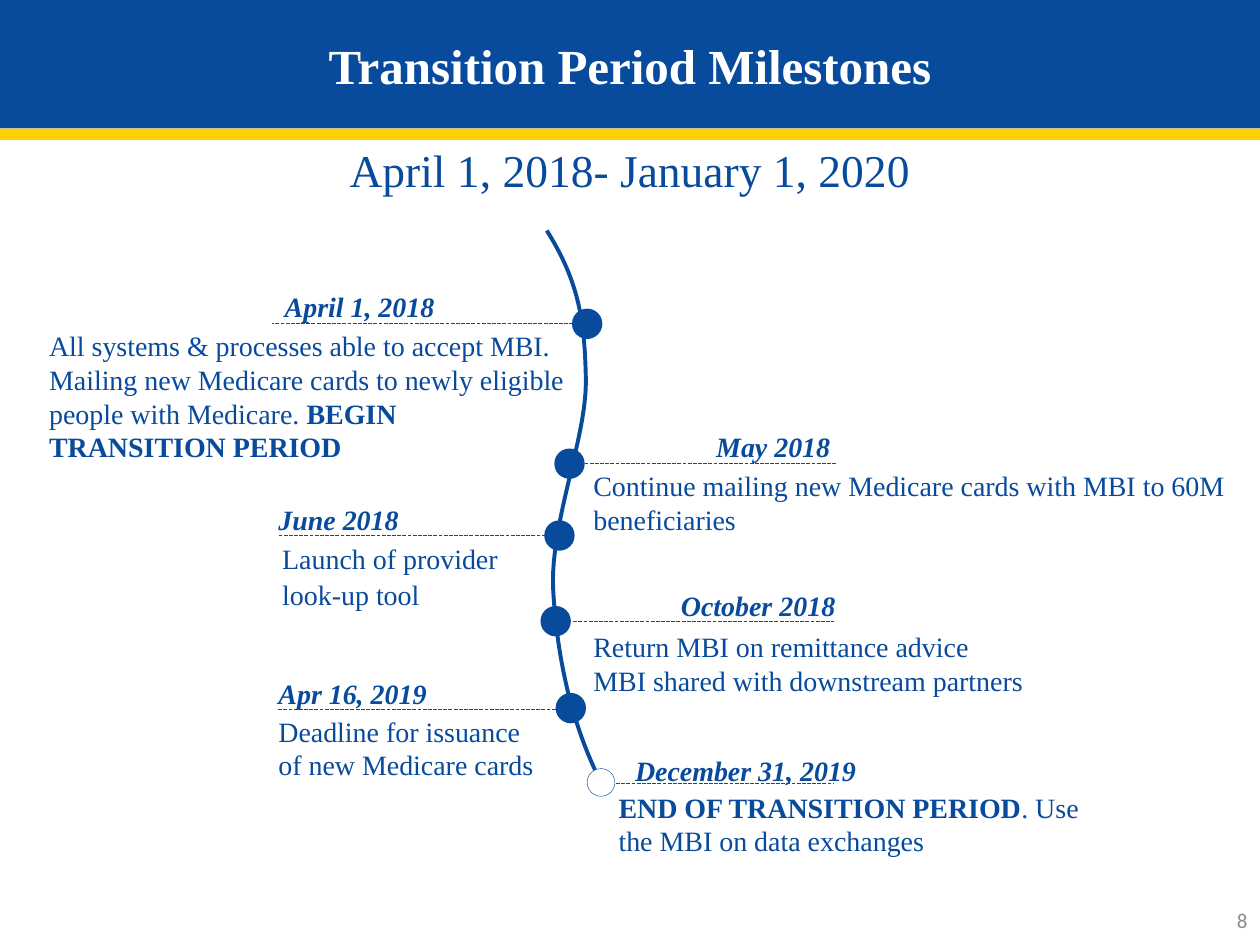
from dataclasses import dataclass

from lxml import etree
from pptx import Presentation
from pptx.dml.color import RGBColor
from pptx.enum import dml, shapes, text
from pptx.oxml import ns
from pptx.util import Inches, Pt


@dataclass(frozen=True)
class Theme:
    """Colours, fonts and type sizes of the slide."""
    blue: RGBColor = RGBColor.from_string("084A9C")
    gold: RGBColor = RGBColor.from_string("FFD004")
    white: RGBColor = RGBColor.from_string("FFFFFF")
    grey: RGBColor = RGBColor.from_string("8C8C8C")
    serif: str = "Times New Roman"
    sans: str = "Calibri"
    title: int = 28
    period: int = 26
    body: int = 16
    number: int = 12


@dataclass(frozen=True)
class Milestone:
    """One dated stop: marker corner, rule, date box, detail box and wording."""
    marker: tuple
    rule: tuple
    date_box: tuple
    date: str
    detail_box: tuple
    detail: tuple
    date_align: text.PP_ALIGN = text.PP_ALIGN.LEFT
    gap: float = 0
    final: bool = False


THEME = Theme()
MARKER_SIZE = 0.22
RIGHT = text.PP_ALIGN.RIGHT
CURVE_START = (4.34, 1.83)
CURVE = (
    ((4.59, 2.23), (4.64, 2.53), (4.65, 3)),
    ((4.66, 3.47), (4.37, 4.13), (4.39, 4.67)),
    ((4.42, 5.21), (4.53, 5.74), (4.78, 6.23)),
)
MILESTONES = (
    Milestone((4.55, 2.46), (4.55, 2.16, 2.57), (2.26, 2.3, 2.33, 0.31), "April 1, 2018",
              (0.39, 2.57, 4.13, 1.12),
              ((("All systems & processes able to accept MBI. Mailing new Medicare cards "
                 "to newly eligible people with Medicare. ", False),
                ("BEGIN TRANSITION PERIOD", True)),)),
    Milestone((4.41, 3.57), (4.64, 6.64, 3.68), (5.46, 3.41, 1.13, 0.31), "May 2018",
              (4.71, 3.68, 5.04, 0.58),
              ((("Continue mailing new Medicare cards with MBI to 60M beneficiaries", False),),),
              date_align=RIGHT),
    Milestone((4.33, 4.14), (4.33, 2.21, 4.25), (2.21, 3.99, 1.18, 0.31), "June 2018",
              (2.24, 4.26, 2.24, 0.9),
              ((("Launch of provider", False),), (("look-up tool", False),)), gap=1.5),
    Milestone((4.3, 4.82), (4.55, 6.62, 4.93), (5.16, 4.67, 1.47, 0.31), "October 2018",
              (4.71, 4.96, 3.57, 0.58),
              ((("Return MBI on remittance advice", False),),
               (("MBI shared with downstream partners", False),)),
              date_align=RIGHT),
    Milestone((4.42, 5.51), (4.45, 2.21, 5.63), (2.21, 5.37, 1.49, 0.31), "Apr 16, 2019",
              (2.21, 5.63, 2.13, 0.58),
              ((("Deadline for issuance of new Medicare cards", False),),)),
    Milestone((4.66, 6.1), (4.89, 6.61, 6.22), (5.04, 5.98, 2.24, 0.31), "December 31, 2019",
              (4.91, 6.23, 3.87, 0.58),
              ((("END OF TRANSITION PERIOD", True),
                (". Use the MBI on data exchanges", False)),), final=True),
)


def inches(values):
    """Turn a sequence of numbers into lengths."""
    return [Inches(value) for value in values]


def add_run(paragraph, wording, size, color=THEME.blue, font=THEME.serif, bold=False, italic=False):
    """Append one formatted run."""
    run = paragraph.add_run()
    run.text = wording
    run.font.name, run.font.size = font, Pt(size)
    run.font.bold, run.font.italic = bold, italic
    run.font.color.rgb = color


def set_frame(frame, insets, anchor=text.MSO_ANCHOR.TOP):
    """Set wrapping, insets and anchor of a text frame."""
    frame.word_wrap = True
    frame.auto_size = text.MSO_AUTO_SIZE.NONE
    frame.vertical_anchor = anchor
    (frame.margin_left, frame.margin_top,
     frame.margin_right, frame.margin_bottom) = inches(insets)


def add_text(slide, box, insets, anchor=text.MSO_ANCHOR.TOP):
    """Add an empty text box and return its frame."""
    frame = slide.shapes.add_textbox(*inches(box)).text_frame
    set_frame(frame, insets, anchor)
    return frame


def add_filled(slide, kind, box, fill, line=None, width=0):
    """Add a plain filled shape, outlined when a line colour is given."""
    shape = slide.shapes.add_shape(kind, *inches(box))
    shape.shadow.inherit = False
    shape.fill.solid()
    shape.fill.fore_color.rgb = fill
    if line is None:
        shape.line.fill.background()
    else:
        shape.line.color.rgb = line
        shape.line.width = Pt(width)


def add_header(slide, box):
    """Draw the banner with its gold stripe and the slide title."""
    left, top, width, height = box
    stripe = 0.09
    rectangle = shapes.MSO_SHAPE.RECTANGLE
    add_filled(slide, rectangle, (left, top, width, height - stripe), THEME.blue)
    add_filled(slide, rectangle, (left, top + height - stripe, width, stripe), THEME.gold)
    title = slide.shapes.title
    title.left, title.top, title.width, title.height = inches((left, top + 0.28, width, 0.47))
    set_frame(title.text_frame, (0, 0, 0, 0), text.MSO_ANCHOR.MIDDLE)
    paragraph = title.text_frame.paragraphs[0]
    paragraph.alignment = text.PP_ALIGN.CENTER
    add_run(paragraph, "Transition Period Milestones", THEME.title, THEME.white, bold=True)
    slide.shapes._spTree.append(title._element)


def add_period(slide, box):
    """Write the span of the transition period."""
    paragraph = add_text(slide, box, (0.1, 0.05, 0.1, 0.05)).paragraphs[0]
    paragraph.alignment = text.PP_ALIGN.CENTER
    add_run(paragraph, "April 1, 2018- January 1, 2020", THEME.period)


def add_number(slide, box):
    """Write the slide number."""
    paragraph = add_text(slide, box, (0.1, 0.05, 0.1, 0.05), text.MSO_ANCHOR.MIDDLE).paragraphs[0]
    paragraph.alignment = RIGHT
    add_run(paragraph, "8", THEME.number, THEME.grey, THEME.sans)


def curve_points(start, segments, steps=24):
    """Yield points along a chain of cubic Bézier segments."""
    for segment in segments:
        controls = (start, *segment)
        for step in range(1, steps + 1):
            t = step / steps
            weights = ((1 - t) ** 3, 3 * t * (1 - t) ** 2, 3 * t * t * (1 - t), t ** 3)
            yield inches(sum(w * point[axis] for w, point in zip(weights, controls))
                         for axis in (0, 1))
        start = segment[-1]


def add_curve(slide):
    """Draw the winding time line."""
    builder = slide.shapes.build_freeform(*inches(CURVE_START))
    builder.add_line_segments(curve_points(CURVE_START, CURVE), close=False)
    curve = builder.convert_to_shape()
    curve.shadow.inherit = False
    curve.fill.background()
    curve.line.color.rgb = THEME.blue
    curve.line.width = Pt(2.25)


def add_rule(slide, start, end, y):
    """Draw the dashed rule under a date."""
    rule = slide.shapes.add_connector(shapes.MSO_CONNECTOR.STRAIGHT, *inches((start, y, end, y)))
    rule.line.color.rgb = THEME.blue
    rule.line.width = Pt(0.75)
    rule.line.dash_style = dml.MSO_LINE.SQUARE_DOT
    etree.SubElement(rule._element.spPr, ns.qn("a:effectLst"))


def add_milestone(slide, stop):
    """Place marker, rule, date and detail of one milestone."""
    add_rule(slide, *stop.rule)
    add_filled(slide, shapes.MSO_SHAPE.OVAL, (*stop.marker, MARKER_SIZE, MARKER_SIZE),
               THEME.white if stop.final else THEME.blue, THEME.blue, 0.25 if stop.final else 1.5)
    heading = add_text(slide, stop.date_box, (0, 0, 0, 0.04)).paragraphs[0]
    heading.alignment = stop.date_align
    add_run(heading, stop.date, THEME.body, bold=True, italic=True)
    frame = add_text(slide, stop.detail_box, (0, 0.04, 0, 0))
    for index, runs in enumerate(stop.detail):
        paragraph = frame.add_paragraph() if index else frame.paragraphs[0]
        paragraph.space_after = Pt(stop.gap)
        for wording, bold in runs:
            add_run(paragraph, wording, THEME.body, bold=bold)


def main():
    """Build and save the slide."""
    deck = Presentation()
    deck.slide_width, deck.slide_height = inches((10, 7.5))
    slide = deck.slides.add_slide(deck.slide_layouts[5])
    add_header(slide, (0, 0, 10, 1.11))
    add_period(slide, (0, 1.08, 10, 0.54))
    add_curve(slide)
    for stop in MILESTONES:
        add_milestone(slide, stop)
    add_number(slide, (7.67, 7.1, 2.33, 0.4))
    deck.save("out.pptx")


if __name__ == "__main__":
    main()
